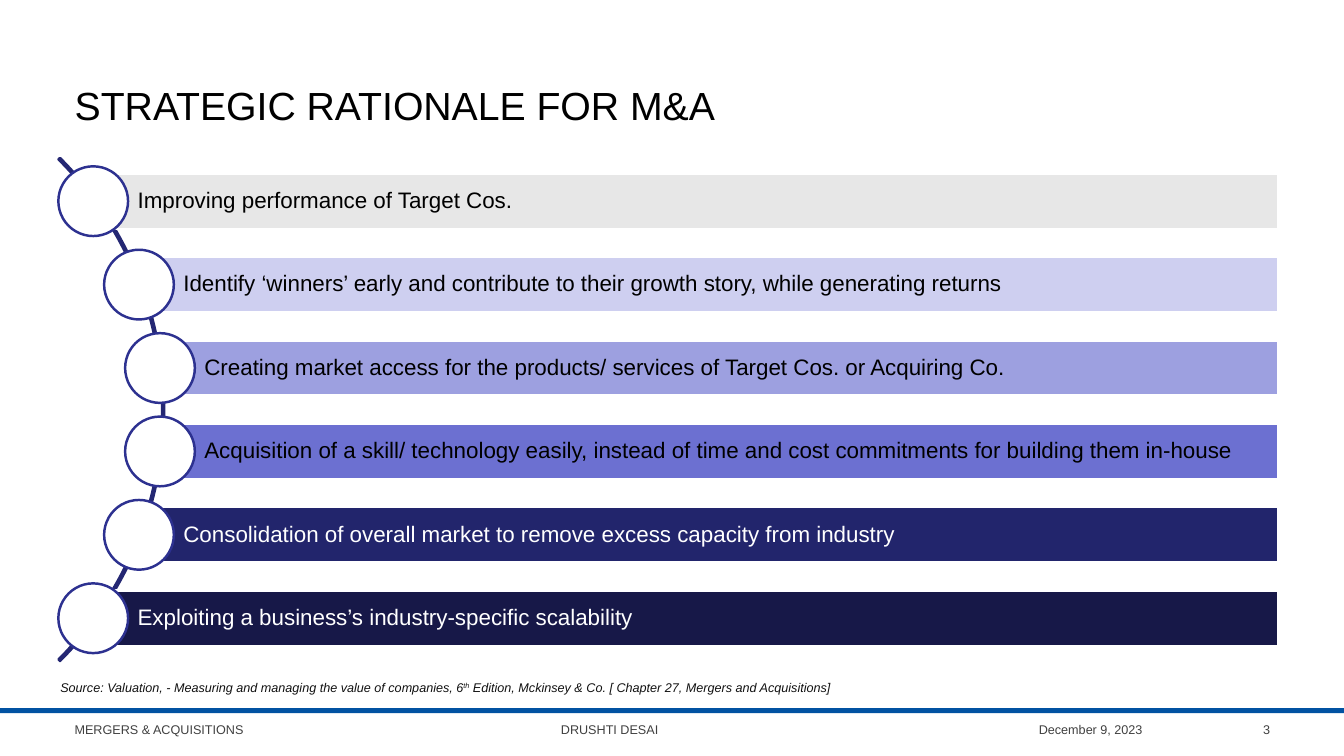
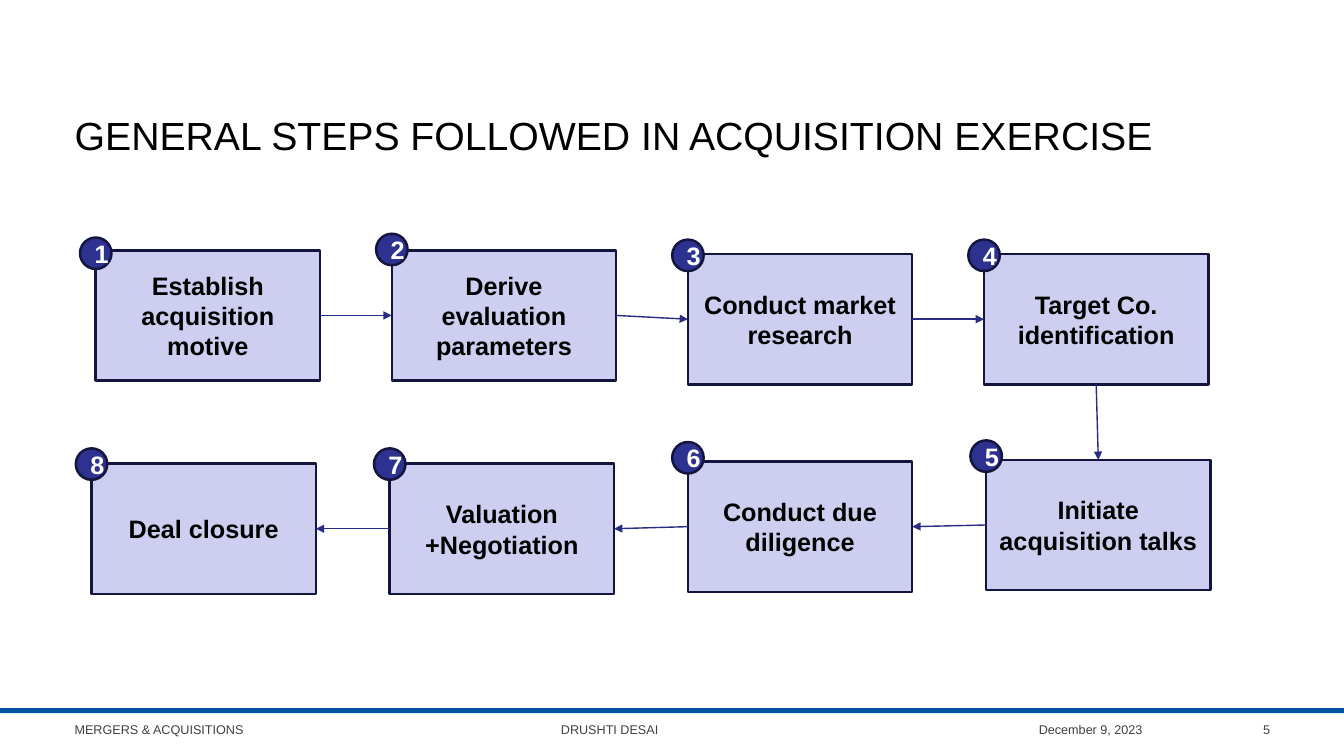
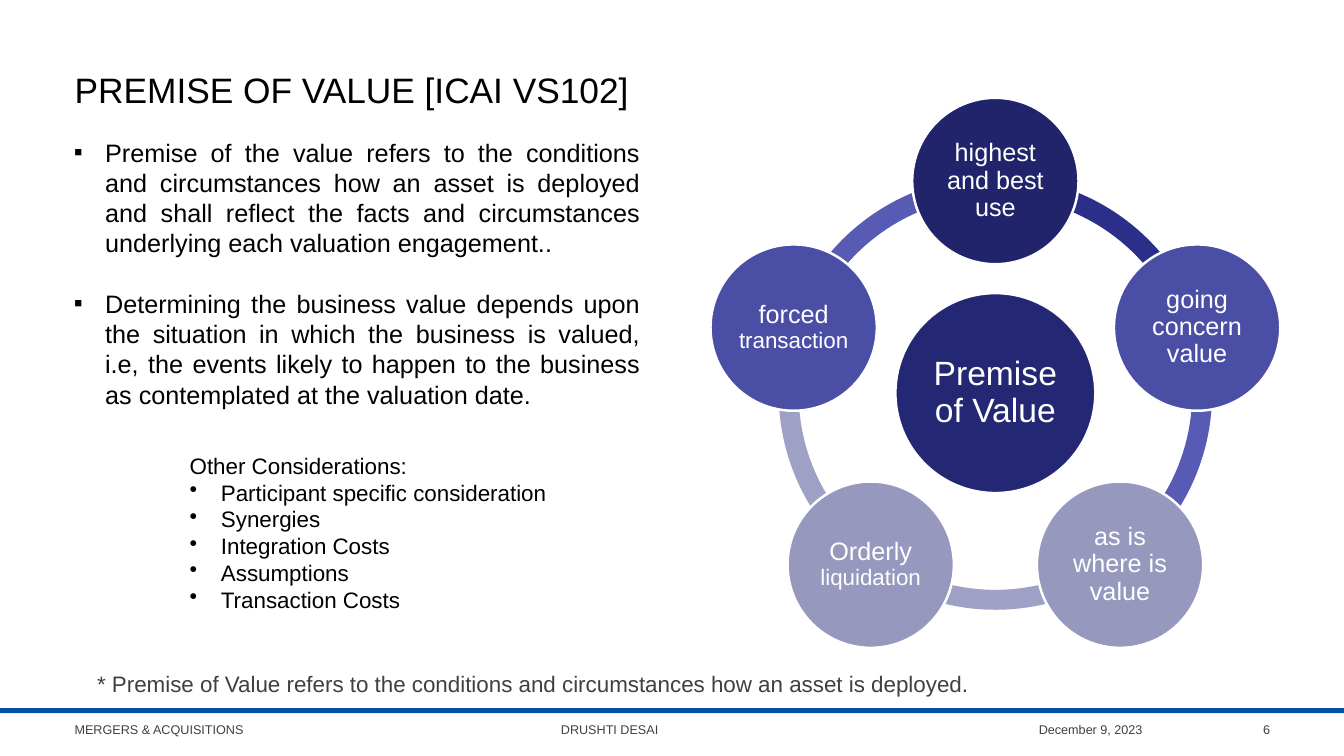
from dataclasses import dataclass
from math import cos, radians, sin

from lxml import etree
from pptx import Presentation
from pptx import util as u
from pptx.dml.color import RGBColor
from pptx.enum import shapes, text
from pptx.oxml import ns

SHAPE = shapes.MSO_SHAPE
ALIGN = text.PP_ALIGN
ANCHOR = text.MSO_ANCHOR
TOP, LEFT, BOTTOM, RIGHT = range(4)  # connection sites of a rectangle


@dataclass(frozen=True)
class Theme:
    font: str = "Arial"
    # Colours
    black: str = "000000"
    white: str = "FFFFFF"
    source: str = "111111"
    footer: str = "404040"
    rule: str = "0152A2"
    navy: str = "242773"
    indigo: str = "2D3190"
    outline: str = "14153F"
    arrow: str = "282C82"
    lilac: str = "CECFF0"
    bars: tuple = ("E7E7E7", "CECFF0", "9DA0E0", "6C70D1", "22256C", "171848")
    nodes: tuple = ("21246B", "4B4EA5", "9798BE", "9798BE", "4B4EA5")
    arcs: tuple = ("2B2F8A", "585BB4", "9FA0C5", "9FA0C5", "585BB4")
    # Sizes in points
    title: float = 28
    small_title: float = 25.2
    hub: float = 24
    body: float = 18
    label: float = 16
    small: float = 9
    line: float = 1.75
    thin_line: float = 1


THEME = Theme()


def color(value):
    return RGBColor.from_string(value)


def add_bullet(paragraph, character, indent=0.31):
    """Hang the paragraph on a bullet, with the indent in inches."""
    properties = paragraph._p.get_or_add_pPr()
    properties.set("marL", str(u.Inches(indent)))
    properties.set("indent", str(-u.Inches(indent)))
    etree.SubElement(properties, ns.qn("a:buChar")).set("char", character)


def write(shape, paragraphs, size=THEME.body, fill=THEME.black, bold=False,
          italic=False, align=ALIGN.LEFT, anchor=ANCHOR.TOP, spacing=None,
          insets=None, bullet=None, bullet_from=0, gap=0):
    """Fill a shape; a paragraph is a string or a list of (text, overrides)."""
    frame = shape.text_frame
    frame.word_wrap = True
    frame.auto_size = text.MSO_AUTO_SIZE.NONE
    frame.vertical_anchor = anchor
    if insets:
        (frame.margin_left, frame.margin_top,
         frame.margin_right, frame.margin_bottom) = map(u.Inches, insets)
    if isinstance(paragraphs, str):
        paragraphs = [paragraphs]
    for index, content in enumerate(paragraphs):
        paragraph = frame.add_paragraph() if index else frame.paragraphs[0]
        paragraph.alignment = align
        paragraph.space_before = u.Pt(gap if index else 0)
        if spacing:
            paragraph.line_spacing = spacing
        if bullet and index >= bullet_from:
            add_bullet(paragraph, bullet)
        for words, extra in [(content, {})] if isinstance(content, str) else content:
            run = paragraph.add_run()
            run.text = words
            font = run.font
            font.name = THEME.font
            font.size = u.Pt(extra.get("size", size))
            font.bold, font.italic = bold, italic
            font.color.rgb = color(fill)
            if "baseline" in extra:
                run._r.get_or_add_rPr().set("baseline", str(extra["baseline"]))


class Deck:
    """Style and current slide, on a grid of 160 columns by 90 rows."""
    COLUMNS, ROWS = 160, 90

    def __init__(self, theme):
        self.theme = theme
        self.presentation = Presentation()
        self.presentation.slide_width = u.Inches(13.33)
        self.presentation.slide_height = u.Inches(7.5)
        self.slide = None

    def area(self, column, row, columns, rows):
        across = self.presentation.slide_width / self.COLUMNS
        down = self.presentation.slide_height / self.ROWS
        return [u.Emu(round(length)) for length in
                (column * across, row * down, columns * across, rows * down)]

    def place(self, shape, area):
        shape.left, shape.top, shape.width, shape.height = self.area(*area)

    def start(self, title, number, area, size, layout=5):
        """Open a slide with its title, rule and footer."""
        layouts = self.presentation.slide_layouts
        self.slide = self.presentation.slides.add_slide(layouts[layout])
        heading = self.slide.shapes.title
        self.place(heading, area)
        write(heading, title, size=size, anchor=ANCHOR.MIDDLE)
        self.shape(SHAPE.RECTANGLE, (0, 84.3, 160, 0.6), self.theme.rule)
        for words, column, columns, align in (
                ("MERGERS & ACQUISITIONS", 7.7, 50, ALIGN.LEFT),
                ("DRUSHTI DESAI", 65.6, 25, ALIGN.LEFT),
                ("December 9, 2023", 99.8, 37.4, ALIGN.RIGHT),
                (str(number), 138.6, 13.8, ALIGN.RIGHT)):
            self.text((column, 84.4, columns, 4.8), words, align=align,
                      size=self.theme.small, fill=self.theme.footer,
                      anchor=ANCHOR.MIDDLE)

    def text(self, area, paragraphs, **style):
        write(self.slide.shapes.add_textbox(*self.area(*area)), paragraphs, **style)

    def body(self, area, paragraphs, **style):
        placeholder = self.slide.placeholders[1]
        self.place(placeholder, area)
        write(placeholder, paragraphs, **style)

    def shape(self, kind, area, fill=None, line=None):
        shape = self.slide.shapes.add_shape(kind, *self.area(*area))
        shape.shadow.inherit = False
        if fill:
            shape.fill.solid()
            shape.fill.fore_color.rgb = color(fill)
        else:
            shape.fill.background()
        if line:
            shape.line.color.rgb = color(line)
            shape.line.width = u.Pt(self.theme.line)
        else:
            shape.line.fill.background()
        return shape

    def circle(self, x, y, diameter, fill, line):
        """Draw a circle around its centre."""
        corner = (x - diameter / 2, y - diameter / 2)
        return self.shape(SHAPE.OVAL, (*corner, diameter, diameter), fill, line)

    def arc(self, x, y, diameter, start, end, thickness, **paint):
        """Draw a block arc clockwise between two angles in degrees."""
        corner = (x - diameter / 2, y - diameter / 2)
        arc = self.shape(SHAPE.BLOCK_ARC, (*corner, diameter, diameter), **paint)
        for index, value in enumerate((start % 360 * 0.6, end % 360 * 0.6, thickness)):
            arc.adjustments[index] = value

    def arrow(self, origin, origin_side, target, target_side):
        arrow = self.slide.shapes.add_connector(
            shapes.MSO_CONNECTOR.STRAIGHT, 0, 0, 0, 0)
        arrow.begin_connect(origin, origin_side)
        arrow.end_connect(target, target_side)
        arrow.line.color.rgb = color(self.theme.arrow)
        arrow.line.width = u.Pt(self.theme.thin_line)
        line = arrow.line._get_or_add_ln()
        etree.SubElement(line, ns.qn("a:tailEnd")).set("type", "triangle")
        etree.SubElement(arrow._element.spPr, ns.qn("a:effectLst"))


def rationale_slide(deck):
    theme = deck.theme
    deck.start("STRATEGIC RATIONALE FOR M&A", 3, (7.7, 6, 144.7, 13), theme.title)
    deck.arc(-22.8, 48.75, 84.7, 315, 45, 0.003, line=theme.navy)

    # Bars whose left ends follow the arc
    reasons = (
        "Improving performance of Target Cos.",
        "Identify ‘winners’ early and contribute to their growth story, while generating returns",
        "Creating market access for the products/ services of Target Cos. or Acquiring Co.",
        "Acquisition of a skill/ technology easily, instead of time and cost commitments for building them in-house",
        "Consolidation of overall market to remove excess capacity from industry",
        "Exploiting a business’s industry-specific scalability",
    )
    lefts = (11.1, 16.55, 19.05)
    right, height, pitch = 152.2, 6.6, 9.93
    for index, (reason, fill) in enumerate(zip(reasons, theme.bars)):
        left, top = lefts[min(index, 5 - index)], 20.65 + index * pitch
        bar = deck.shape(SHAPE.RECTANGLE, (left, top, right - left, height),
                         fill, theme.white)
        write(bar, reason, size=theme.label, anchor=ANCHOR.MIDDLE, spacing=0.9,
              fill=theme.black if index < 4 else theme.white,
              insets=(0.44, 0.04, 0.04, 0.04))
        deck.circle(left, top + height / 2, 8.3, theme.white, theme.indigo)

    deck.text((6, 80.3, 144.7, 3.7), [[
        ("Source: Valuation, - Measuring and managing the value of companies, 6", {}),
        ("th", {"baseline": 30000}),
        (" Edition, Mckinsey & Co. [ Chapter 27, Mergers and Acquisitions]", {}),
    ]], size=theme.small, fill=theme.source, italic=True)


def steps_slide(deck):
    theme = deck.theme
    deck.start("GENERAL STEPS FOLLOWED IN ACQUISITION EXERCISE", 5,
               (7.7, 9.5, 144.7, 13), theme.title)

    # Step, top of its box, rise of its badge above the box
    steps = (
        ("Establish acquisition motive", 29.8, 1.5),
        ("Derive evaluation parameters", 29.8, 1.95),
        ("Conduct market research", 30.25, 1.7),
        ("Target Co. identification", 30.25, 1.7),
        ("Initiate acquisition talks", 54.75, 2.3),
        ("Conduct due diligence", 54.95, 2.3),
        ("Valuation +Negotiation", 55.2, 1.8),
        ("Deal closure", 55.2, 1.8),
    )
    boxes = []
    for index, (step, top, rise) in enumerate(steps):
        # The first row runs to the right, the second one back
        left = 11.4 + 35.25 * index if index < 4 else 10.9 + 35.5 * (7 - index)
        box = deck.shape(SHAPE.RECTANGLE, (left, top, 26.7, 15.5),
                         theme.lilac, theme.outline)
        write(box, step, bold=True, align=ALIGN.CENTER, anchor=ANCHOR.MIDDLE)
        badge = deck.circle(left, top - rise + 1.85, 3.75, theme.indigo, theme.outline)
        write(badge, str(index + 1), bold=True, fill=theme.white,
              align=ALIGN.CENTER, anchor=ANCHOR.MIDDLE)
        boxes.append(box)

    sides = [(RIGHT, LEFT)] * 3 + [(BOTTOM, TOP)] + [(LEFT, RIGHT)] * 3
    for origin, target, (leave, enter) in zip(boxes, boxes[1:], sides):
        deck.arrow(origin, leave, target, enter)


def premise_slide(deck):
    theme = deck.theme
    deck.start("PREMISE OF VALUE [ICAI VS102]", 6, (7.7, 6.1, 74, 9),
               theme.small_title, layout=1)
    deck.body((7.6, 15.7, 69.8, 34), [
        "Premise of the value refers to the conditions and circumstances how an asset is deployed and shall reflect the facts and circumstances underlying each valuation engagement..",
        "Determining the business value depends upon the situation in which the business is valued, i.e, the events likely to happen to the business as contemplated at the valuation date.",
    ], align=ALIGN.JUSTIFY, bullet="▪", gap=21.6)
    deck.text((21.4, 53.2, 46.6, 20.6), [
        "Other Considerations:",
        "Participant specific consideration",
        "Synergies",
        "Integration Costs",
        "Assumptions",
        "Transaction Costs",
    ], size=theme.label, bullet="•", bullet_from=1)
    deck.text((7.7, 77.4, 111.5, 8),
              "* Premise of Value refers to the conditions and circumstances how an asset is deployed.",
              size=theme.label, fill=theme.footer, align=ALIGN.CENTER,
              anchor=ANCHOR.MIDDLE)

    # Ring of five premises around the hub
    x, y, radius, turn = 118.5, 46.8, 25.25, 72
    angles = [270 + turn * index for index in range(5)]
    for angle, fill in zip(angles, theme.arcs):
        deck.arc(x, y, 51.6, angle, angle + turn, 0.046, fill=fill)

    label = dict(fill=theme.white, align=ALIGN.CENTER, anchor=ANCHOR.MIDDLE,
                 spacing=0.9, insets=(0.03,) * 4)
    hub = deck.circle(x, y, 23.8, theme.navy, theme.white)
    write(hub, "Premise of Value", size=theme.hub, **label)
    smaller = {"size": theme.label}
    premises = (
        "highest and best use",
        "going concern value",
        "as is where is value",
        [("Orderly ", {}), ("liquidation", smaller)],
        [("forced ", {}), ("transaction", smaller)],
    )
    for angle, premise, fill in zip(angles, premises, theme.nodes):
        node = deck.circle(x + radius * cos(radians(angle)),
                           y + radius * sin(radians(angle)),
                           19.8, fill, theme.white)
        write(node, [premise], **label)


def main():
    deck = Deck(THEME)
    rationale_slide(deck)
    steps_slide(deck)
    premise_slide(deck)
    deck.presentation.save("out.pptx")


if __name__ == "__main__":
    main()
